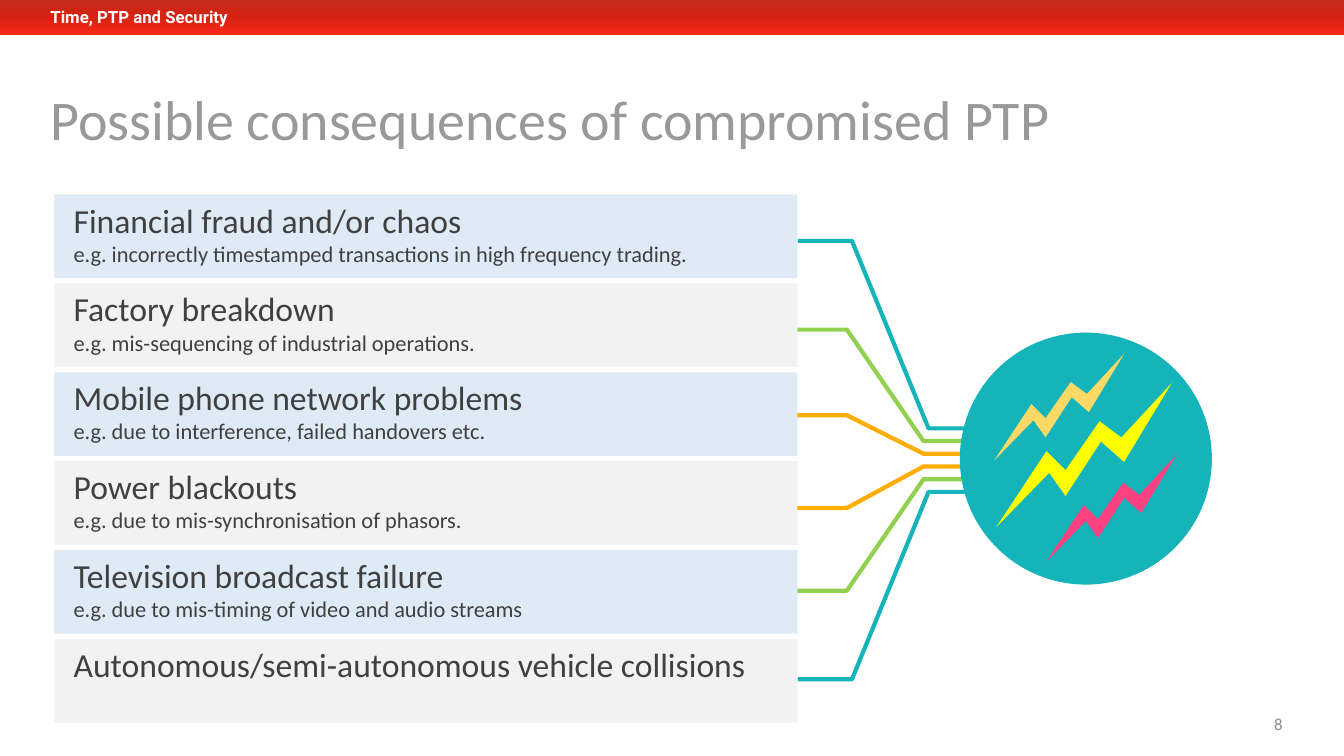
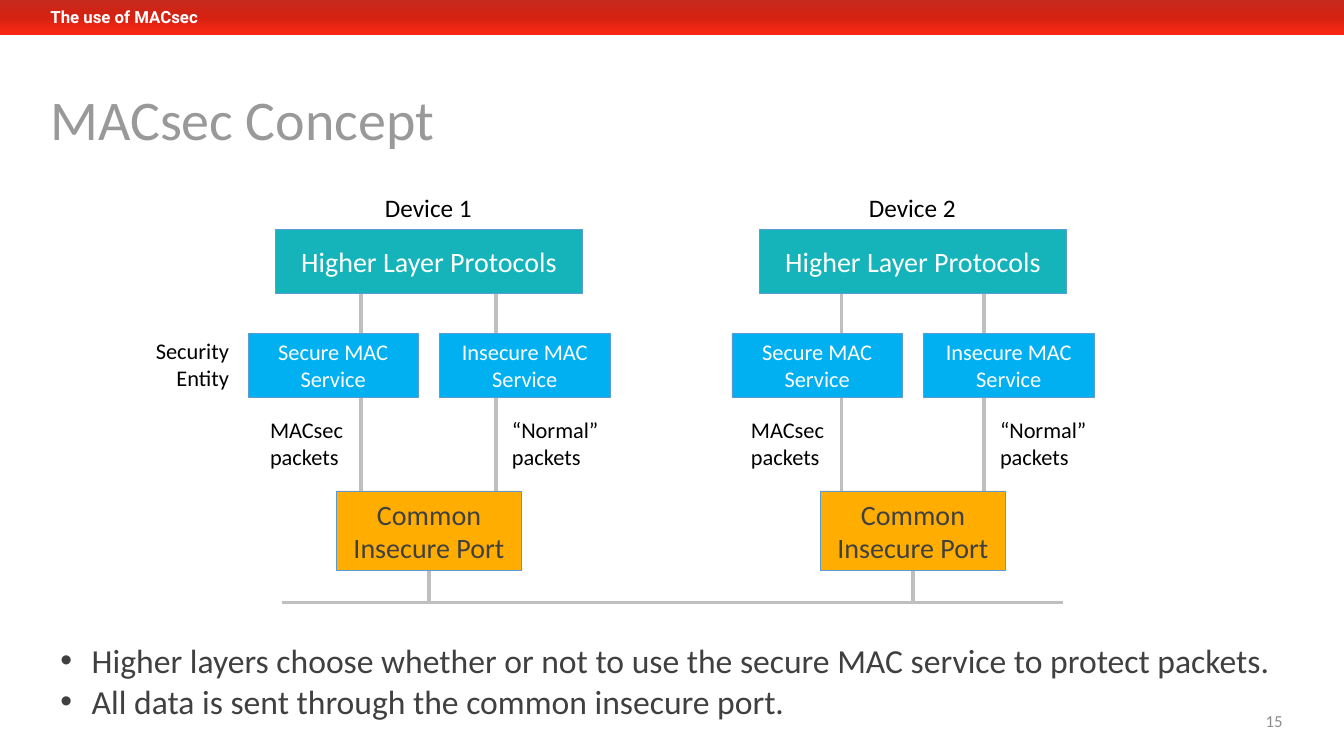
"""Build two slides on the risks of compromised PTP and the MACsec concept."""
from copy import deepcopy

from lxml import etree
from pptx import Presentation
from pptx.dml.color import RGBColor
from pptx.enum.shapes import MSO_CONNECTOR, MSO_SHAPE
from pptx.enum.text import MSO_ANCHOR, MSO_AUTO_SIZE, PP_ALIGN
from pptx.oxml.ns import qn
from pptx.util import Inches, Pt

LEFT, CENTER, RIGHT = PP_ALIGN.LEFT, PP_ALIGN.CENTER, PP_ALIGN.RIGHT
TOP, MIDDLE = MSO_ANCHOR.TOP, MSO_ANCHOR.MIDDLE
RECT, OVAL = MSO_SHAPE.RECTANGLE, MSO_SHAPE.OVAL
STRAIGHT = MSO_CONNECTOR.STRAIGHT
NO_FIT = MSO_AUTO_SIZE.NONE

FONT = "Calibri"
COLORS = {
    "white": "FFFFFF", "black": "000000", "title": "999999", "body": "404040",
    "number": "8C8C8C", "teal": "15B4BA", "green": "92D050", "orange": "FFAD01",
    "blue": "00B0F0", "outline": "5B9BD5", "line": "BFBFBF",
    "row_blue": "DEEBF7", "row_gray": "F2F2F2",
    "amber": "FFD966", "yellow": "FFFF00", "pink": "FF4181",
    "band_top": "C52A1D", "band_mid": "D52212", "band_end": "FD2815",
}
CONSEQUENCES = [
    ("Financial fraud and/or chaos",
     "e.g. incorrectly timestamped transactions in high frequency trading."),
    ("Factory breakdown", "e.g. mis-sequencing of industrial operations."),
    ("Mobile phone network problems",
     "e.g. due to interference, failed handovers etc."),
    ("Power blackouts", "e.g. due to mis-synchronisation of phasors."),
    ("Television broadcast failure",
     "e.g. due to mis-timing of video and audio streams"),
    ("Autonomous/semi-autonomous vehicle collisions",),
]
TRACES = [
    (7.91, 2.39, "teal"), (7.86, 3.27, "green"), (7.86, 4.12, "orange"),
    (7.86, 5.04, "orange"), (7.86, 5.86, "green"), (7.91, 6.74, "teal"),
]
BOLT = [
    (0, 1.06), (0.37, 0.5), (0.51, 0.64), (0.76, 0.28), (0.92, 0.4),
    (1.29, 0), (0.94, 0.58), (0.77, 0.43), (0.51, 0.83), (0.39, 0.66),
]


def rgb(name):
    """Return the named colour."""
    return RGBColor.from_string(COLORS[name])


def place(sp, x, y, w, h):
    """Move and size a shape in inches."""
    sp.left, sp.top, sp.width, sp.height = (Inches(v) for v in (x, y, w, h))


def style(p, size, color, align=LEFT, font=FONT, bold=False):
    """Format one paragraph."""
    p.alignment = align
    p.font.size = Pt(size)
    p.font.name = font
    p.font.bold = bold
    p.font.color.rgb = rgb(color)


def fill_text(tf, lines, size, color, align=LEFT, anchor=TOP, wrap=True, **font):
    """Write lines as paragraphs of one style."""
    tf.text = "\n".join(lines)
    tf.word_wrap = wrap
    tf.vertical_anchor = anchor
    for p in tf.paragraphs:
        style(p, size, color, align, **font)


def add_label(s, x, y, w, h, lines, size, color, **options):
    """Add a text box and return its text frame."""
    tf = s.shapes.add_textbox(*(Inches(v) for v in (x, y, w, h))).text_frame
    fill_text(tf, lines, size, color, **options)
    return tf


def paint(sp, fill, outline=None):
    """Give a shape a flat fill and an optional thin outline."""
    sp.shadow.inherit = False
    sp.fill.solid()
    sp.fill.fore_color.rgb = rgb(fill)
    if outline:
        sp.line.color.rgb = rgb(outline)
        sp.line.width = Pt(0.5)
    else:
        sp.line.fill.background()


def add_box(s, x, y, w, h, fill, kind=RECT, outline=None):
    """Add a flat preset shape."""
    sp = s.shapes.add_shape(kind, *(Inches(v) for v in (x, y, w, h)))
    paint(sp, fill, outline)
    return sp


def add_block(s, x, y, w, h, fill, text, size, color="white"):
    """Add an outlined box with centred text."""
    sp = add_box(s, x, y, w, h, fill, outline="outline")
    fill_text(sp.text_frame, [text], size, color, align=CENTER, anchor=MIDDLE)
    return sp


def add_line(s, x1, y1, x2, y2):
    """Add a gray straight line."""
    c = s.shapes.add_connector(STRAIGHT, *(Inches(v) for v in (x1, y1, x2, y2)))
    c.line.color.rgb = rgb("line")
    c.line.width = Pt(2.25)
    etree.SubElement(c._element.spPr, qn("a:effectLst"))
    return c


def add_path(s, points, close):
    """Add a freeform through points in inches."""
    pts = [(Inches(x), Inches(y)) for x, y in points]
    builder = s.shapes.build_freeform(*pts[0])
    builder.add_line_segments(pts[1:], close=close)
    sp = builder.convert_to_shape()
    sp.shadow.inherit = False
    return sp


def add_band(s, section):
    """Add the red gradient band with the section name."""
    band = add_box(s, 0, -0.01, 13.34, 0.36, "band_top")
    band.fill.gradient()
    band.fill.gradient_angle = 270
    stops = band._element.xpath(".//a:gsLst")[0]
    stops.insert(1, deepcopy(stops[0]))
    names = ("band_top", "band_mid", "band_end")
    for i, (stop, name) in enumerate(zip(band.fill.gradient_stops, names)):
        stop.position = i / 2
        stop.color.rgb = rgb(name)
    tf = add_label(s, 0.5, 0.02, 3.92, 0.3, [section], 12, "white",
                   font="Roboto", bold=True)
    tf.margin_left = 0


def new_slide(prs, layout, section, title, number, number_y):
    """Add a slide with band, title and page number."""
    s = prs.slides.add_slide(prs.slide_layouts[layout])
    add_band(s, section)
    place(s.shapes.title, 0.5, 0.91, 10.31, 0.61)
    tf = s.shapes.title.text_frame
    fill_text(tf, [title], 40, "title", anchor=MIDDLE)
    tf.auto_size = NO_FIT
    tf.margin_left = tf.margin_right = tf.margin_top = tf.margin_bottom = 0
    tf.paragraphs[0].line_spacing = 0.9
    add_label(s, 9.82, number_y, 3, 0.4, [number], 12, "number",
              align=RIGHT, anchor=MIDDLE)
    return s


def add_traces(s):
    """Draw the circuit traces from the rows to the circle."""
    for i, (x, y, color) in enumerate(TRACES):
        end = 4.25 + 0.126 * i
        sp = add_path(s, [(x, y), (x + 0.54, y), (x + 1.3, end),
                          (x + 1.98, end)], False)
        sp.fill.background()
        sp.line.color.rgb = rgb(color)
        sp.line.width = Pt(3)


def add_rows(s, x, y, w):
    """Stack the consequence rows in alternating colours."""
    for i, lines in enumerate(CONSEQUENCES):
        fill = "row_gray" if i % 2 else "row_blue"
        sp = add_box(s, x, y + 0.882 * i, w, 0.83, fill)
        tf = sp.text_frame
        fill_text(tf, lines, 24, "body")
        tf.margin_left = Inches(0.19)
        for p in tf.paragraphs[1:]:
            p.font.size = Pt(16)


def add_emblem(s, x, y, d):
    """Draw the circle with three lightning bolts."""
    add_box(s, x, y, d, d, "teal", kind=OVAL)
    for dx, dy, scale, color in ((0.36, 0.5, 1.35, "yellow"),
                                 (0.34, 0.21, 1, "amber"),
                                 (0.86, 1.21, 1, "pink")):
        points = [(x + dx + px * scale, y + dy + py * scale) for px, py in BOLT]
        paint(add_path(s, points, True), color)


def add_device(s, x, y, name, secure_x, normal_x, bus_y):
    """Draw one device stack and its drop to the bus."""
    for line_x in (secure_x, normal_x):
        for top, bottom in ((0.95, 1.5), (2.05, 3.1)):
            add_line(s, line_x, y + top, line_x, y + bottom)
    add_label(s, x + 1.26, y, 1.07, 0.4, [name], 18, "black", wrap=False)
    add_block(s, x + 0.27, y + 0.42, 3.05, 0.63, "teal",
              "Higher Layer Protocols", 20)
    for i, service in enumerate(("Secure MAC Service", "Insecure MAC Service")):
        add_block(s, x + 1.9 * i, y + 1.45, 1.69, 0.63, "blue", service, 16)
    port = add_block(s, x + 0.88, y + 3.01, 1.83, 0.79, "orange",
                     "Common Insecure Port", 20, "body")
    middle = x + 0.88 + 1.83 / 2
    add_line(s, middle, y + 3.8, middle, bus_y).begin_connect(port, 2)
    for label_x, w, word in ((secure_x - 1, 0.93, "MACsec"),
                             (normal_x + 0.06, 1.07, "“Normal”")):
        add_label(s, label_x, y + 2.22, w, 0.64, [word, "packets"], 16, "black",
                  wrap=False)


def add_bullets(body, x, y, w, h, lines):
    """Place and format the bulleted list."""
    place(body, x, y, w, h)
    tf = body.text_frame
    fill_text(tf, lines, 24, "body")
    tf.auto_size = NO_FIT
    for p in tf.paragraphs:
        pPr = p._p.get_or_add_pPr()
        pPr.set("marL", str(Inches(0.31)))
        pPr.set("indent", str(-Inches(0.31)))
        p.space_before = Pt(0)


def consequences_slide(prs):
    """Build the slide on consequences."""
    s = new_slide(prs, 5, "Time, PTP and Security",
                  "Possible consequences of compromised PTP", "8", 6.98)
    add_traces(s)
    add_rows(s, 0.54, 1.93, 7.37)
    add_emblem(s, 9.52, 3.3, 2.5)


def concept_slide(prs):
    """Build the slide on the MACsec concept."""
    s = new_slide(prs, 1, "The use of MACsec", "MACsec Concept", "15", 6.95)
    bus_y = 5.98
    add_line(s, 2.8, bus_y, 10.54, bus_y)
    add_device(s, 2.46, 1.86, "Device 1", 3.58, 4.92, bus_y)
    add_device(s, 7.26, 1.86, "Device 2", 8.35, 9.76, bus_y)
    add_label(s, 1.43, 3.3, 0.94, 0.64, ["Security", "Entity"], 16, "black",
              align=RIGHT, wrap=False)
    add_bullets(s.placeholders[1], 0.5, 6.3, 12.36, 0.91, [
        "Higher layers choose whether or not to use the secure MAC service"
        " to protect packets.",
        "All data is sent through the common insecure port.",
    ])


def main():
    """Build and save the presentation."""
    prs = Presentation()
    prs.slide_width, prs.slide_height = Inches(13.33), Inches(7.5)
    consequences_slide(prs)
    concept_slide(prs)
    prs.save("out.pptx")


if __name__ == "__main__":
    main()
